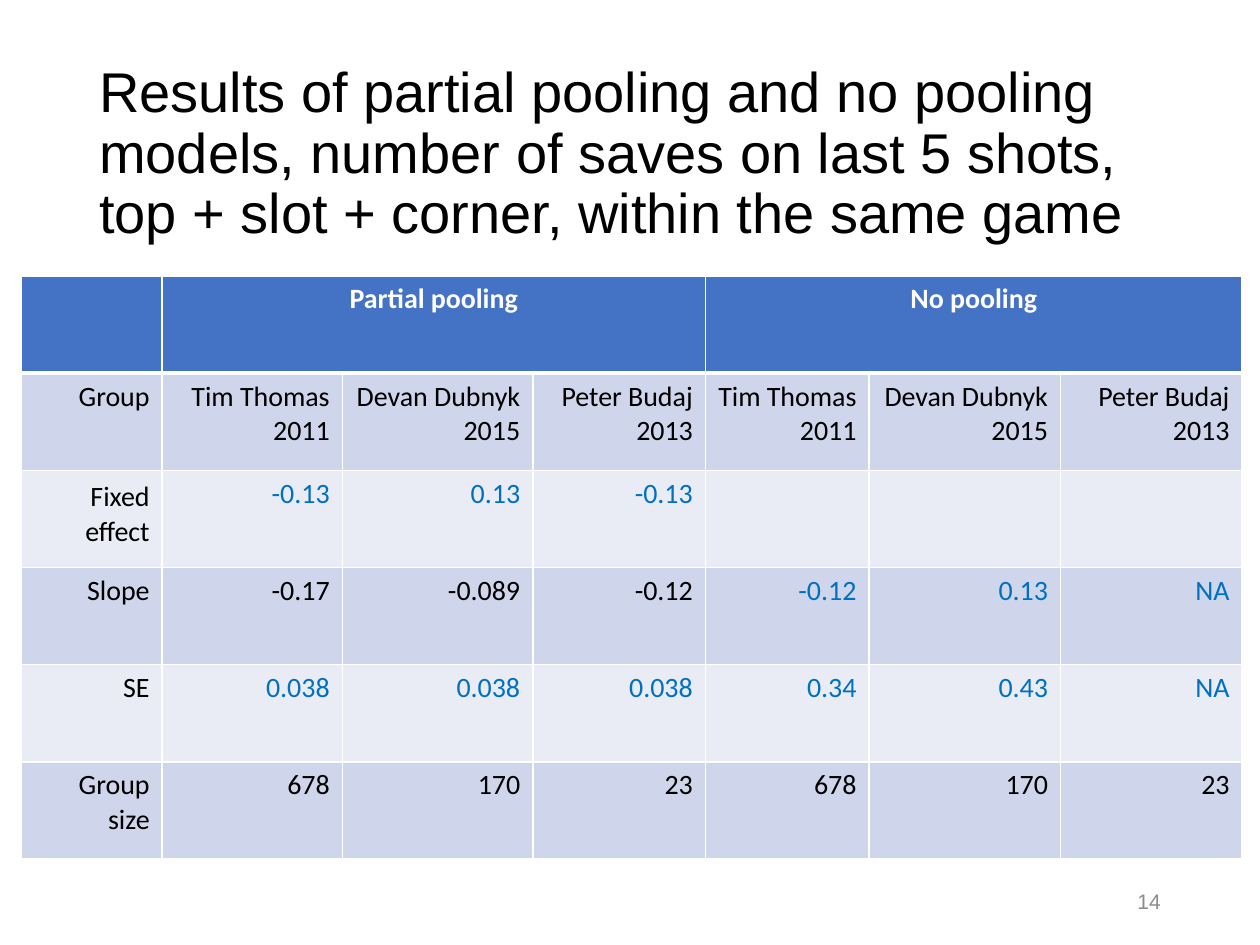
"""Build a slide comparing partial pooling and no pooling model results."""
from dataclasses import dataclass

from lxml import etree
from pptx import Presentation
from pptx.dml.color import RGBColor
from pptx.enum.text import MSO_ANCHOR, PP_ALIGN
from pptx.oxml.ns import qn
from pptx.util import Cm, Pt

MIDDLE = MSO_ANCHOR.MIDDLE
LEFT, CENTER, RIGHT = PP_ALIGN.LEFT, PP_ALIGN.CENTER, PP_ALIGN.RIGHT


@dataclass(frozen=True)
class Theme:
    heading_font: str = "Arial"
    table_font: str = "Calibri"
    title_size: int = 32
    table_size: int = 16
    gap_size: int = 18
    number_size: int = 12
    black: str = "000000"
    white: str = "FFFFFF"
    blue: str = "0070C0"
    gray: str = "8C8C8C"
    header_fill: str = "4472C4"
    band_fills: tuple[str, str] = ("CFD5EA", "E9EBF5")
    thin_line: int = 1
    thick_line: int = 3


@dataclass(frozen=True)
class TextStyle:
    font: str
    size: int
    color: str
    align: PP_ALIGN
    bold: bool = False


@dataclass(frozen=True)
class Box:
    left: float
    top: float
    width: float
    height: float


@dataclass(frozen=True)
class ResultRow:
    label: str
    partial: tuple[str, ...]
    unpooled: tuple[str, ...]
    partial_color: str
    unpooled_color: str


THEME = Theme()
TITLE = ("Results of partial pooling and no pooling models, number of saves "
         "on last 5 shots, top + slot + corner, within the same game")
TITLE_BOX = Box(1.75, 1.02, 21.9, 4.22)
NUMBER_BOX = Box(17.93, 17.65, 5.72, 1.02)
TABLE_LEFT, TABLE_TOP, ROW_HEIGHT = 0.43, 5.56, 1.96
COLUMN_WIDTHS = (2.84, 3.63, 3.84, 3.48, 3.3, 3.86, 3.66)
GROUP_SPAN = 3
HEADINGS = ("Partial pooling", "No pooling")
GOALIES = ("Tim Thomas 2011", "Devan Dubnyk 2015", "Peter Budaj 2013")
SIZES = ("678", "170", "23")
ROWS = (
    ResultRow("Group", GOALIES, GOALIES, THEME.black, THEME.black),
    ResultRow("Fixed effect", ("-0.13", "0.13", "-0.13"), ("", "", ""),
              THEME.blue, THEME.blue),
    ResultRow("Slope", ("-0.17", "-0.089", "-0.12"), ("-0.12", "0.13", "NA"),
              THEME.black, THEME.blue),
    ResultRow("SE", ("0.038",) * 3, ("0.34", "0.43", "NA"),
              THEME.blue, THEME.blue),
    ResultRow("Group size", SIZES, SIZES, THEME.black, THEME.black),
)


def format_para(para, style: TextStyle) -> None:
    para.alignment = style.align
    for span in para.runs:
        span.font.name = style.font
        span.font.size = Pt(style.size)
        span.font.bold = style.bold
        span.font.color.rgb = RGBColor.from_string(style.color)


def add_text(page, box: Box, text: str, style: TextStyle):
    shape = page.shapes.add_textbox(
        Cm(box.left), Cm(box.top), Cm(box.width), Cm(box.height))
    frame = shape.text_frame
    frame.word_wrap = True
    frame.vertical_anchor = MIDDLE
    frame.text = text
    format_para(frame.paragraphs[0], style)
    return frame.paragraphs[0]


def set_borders(cell, top: int, bottom: int) -> None:
    properties = cell._tc.get_or_add_tcPr()
    widths = {"lnL": THEME.thin_line, "lnR": THEME.thin_line,
              "lnT": top, "lnB": bottom}
    for position, (side, width) in enumerate(widths.items()):
        line = etree.Element(qn(f"a:{side}"), w=str(Pt(width)))
        fill = etree.SubElement(line, qn("a:solidFill"))
        etree.SubElement(fill, qn("a:srgbClr"), val=THEME.white)
        properties.insert(position, line)


def fill_cell(cell, text: str, style: TextStyle) -> None:
    if text:
        cell.text_frame.text = text
        format_para(cell.text_frame.paragraphs[0], style)


def widen_gap(cell, style: TextStyle) -> None:
    para = cell.text_frame.paragraphs[0]
    first, last = para.text.split()
    para.text = first
    for text in (" ", last):
        para.add_run().text = text
    format_para(para, style)
    para.runs[1].font.size = Pt(THEME.gap_size)


def paint_row(table, index: int) -> None:
    fill = THEME.band_fills[(index - 1) % 2] if index else THEME.header_fill
    top = THEME.thick_line if index == 1 else THEME.thin_line
    bottom = THEME.thin_line if index else THEME.thick_line
    for cell in table.rows[index].cells:
        cell.fill.solid()
        cell.fill.fore_color.rgb = RGBColor.from_string(fill)
        set_borders(cell, top, bottom)


def body_style(color: str) -> TextStyle:
    return TextStyle(THEME.table_font, THEME.table_size, color, RIGHT)


def add_results(page) -> None:
    row_count = len(ROWS) + 1
    table = page.shapes.add_table(
        row_count, len(COLUMN_WIDTHS), Cm(TABLE_LEFT), Cm(TABLE_TOP),
        Cm(sum(COLUMN_WIDTHS)), Cm(ROW_HEIGHT * row_count)).table
    table.horz_banding = False
    for column, width in zip(table.columns, COLUMN_WIDTHS):
        column.width = Cm(width)
    for index in range(row_count):
        table.rows[index].height = Cm(ROW_HEIGHT)
        paint_row(table, index)

    header = TextStyle(THEME.table_font, THEME.table_size, THEME.white, CENTER, True)
    for group, heading in enumerate(HEADINGS):
        start = 1 + group * GROUP_SPAN
        cell = table.cell(0, start)
        cell.merge(table.cell(0, start + GROUP_SPAN - 1))
        fill_cell(cell, heading, header)

    for index, row in enumerate(ROWS, start=1):
        colors = ((THEME.black,) + (row.partial_color,) * GROUP_SPAN
                  + (row.unpooled_color,) * GROUP_SPAN)
        texts = (row.label, *row.partial, *row.unpooled)
        for cell, text, color in zip(table.rows[index].cells, texts, colors):
            fill_cell(cell, text, body_style(color))
        if row.label == "Fixed effect":
            widen_gap(table.cell(index, 0), body_style(THEME.black))


def main() -> None:
    deck = Presentation()
    deck.slide_width, deck.slide_height = Cm(25.4), Cm(19.05)
    page = deck.slides.add_slide(deck.slide_layouts[6])
    title = add_text(page, TITLE_BOX, TITLE, TextStyle(
        THEME.heading_font, THEME.title_size, THEME.black, LEFT))
    title.line_spacing = 0.9
    add_text(page, NUMBER_BOX, "14", TextStyle(
        THEME.heading_font, THEME.number_size, THEME.gray, RIGHT))
    add_results(page)
    deck.save("out.pptx")


if __name__ == "__main__":
    main()
